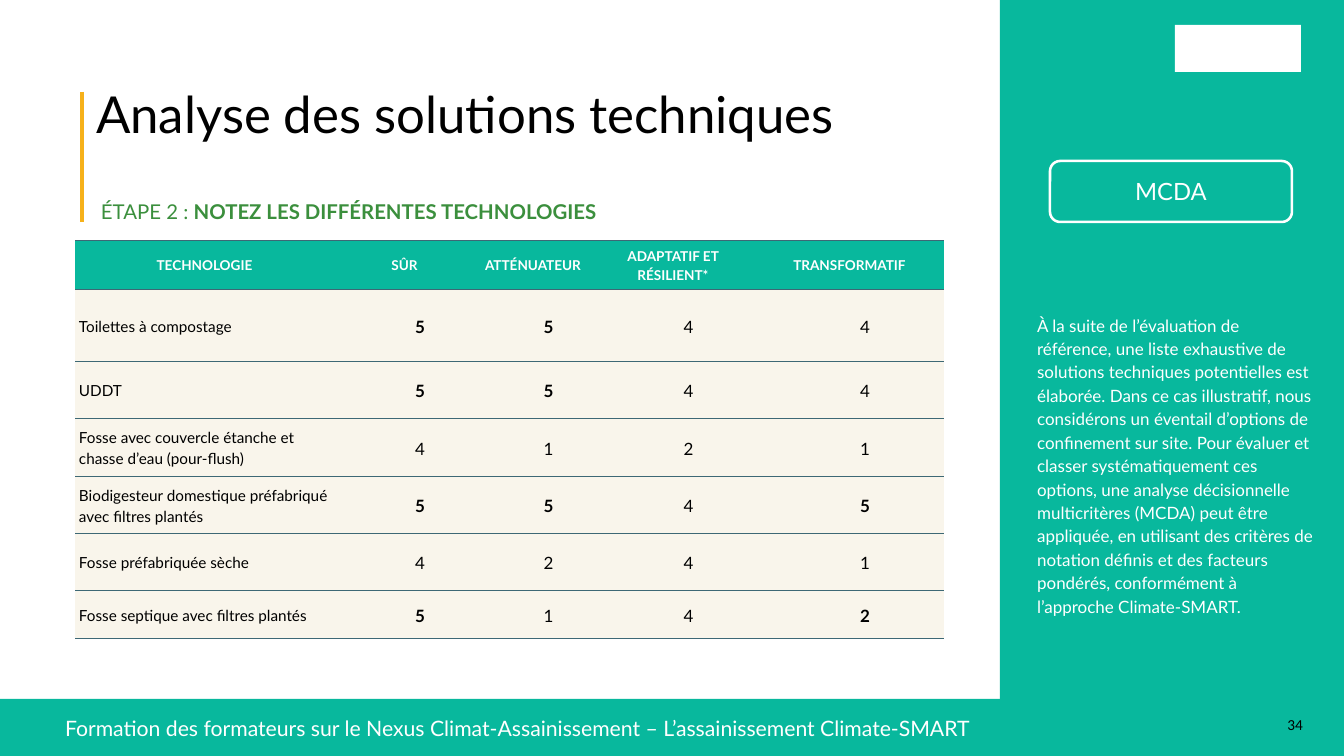
from lxml.etree import SubElement
from pptx import Presentation
from pptx.dml.color import RGBColor
from pptx.enum.shapes import MSO_CONNECTOR, MSO_SHAPE
from pptx.enum.text import MSO_ANCHOR, MSO_AUTO_SIZE, PP_ALIGN
from pptx.oxml.ns import qn
from pptx.util import Emu, Pt

# Content
TITLE = "Analyse des solutions techniques"
STEP = [("ÉTAPE 2 : ", False), ("NOTEZ LES DIFFÉRENTES TECHNOLOGIES", True)]
METHOD = "MCDA"
EXPLANATION = (
    "À la suite de l’évaluation de référence, une liste exhaustive de solutions "
    "techniques potentielles est élaborée. Dans ce cas illustratif, nous considérons "
    "un éventail d’options de confinement sur site. Pour évaluer et classer "
    "systématiquement ces options, une analyse décisionnelle multicritères (MCDA) peut "
    "être appliquée, en utilisant des critères de notation définis et des facteurs "
    "pondérés, conformément à l’approche Climate-SMART."
)
FOOTER = "Formation des formateurs sur le Nexus Climat-Assainissement – L’assainissement Climate-SMART"
PAGE_NUMBER = "34"

HEADINGS = ["TECHNOLOGIE", "SÛR", "ATTÉNUATEUR", "ADAPTATIF ET RÉSILIENT*", "TRANSFORMATIF"]
# Technology, its scores, and the score columns set in bold
RATINGS = [
    ("Toilettes à compostage", "5544", {0, 1}),
    ("UDDT", "5544", {0, 1}),
    ("Fosse avec couvercle étanche et chasse d’eau (pour-flush)", "4121", set()),
    ("Biodigesteur domestique préfabriqué avec filtres plantés", "5545", {0, 1, 3}),
    ("Fosse préfabriquée sèche", "4241", set()),
    ("Fosse septique avec filtres plantés", "5142", {0, 3}),
]
COLUMN_WIDTHS = [259, 141, 116, 164, 189]
ROW_HEIGHTS = [49, 72, 57, 58, 57, 57, 48]

TEAL, CREAM, WHITE, BLACK = "08B89D", "F9F5EB", "FFFFFF", "000000"
GREEN, YELLOW, RULE = "3B8F3D", "F6B11A", "3D6875"
WIDTH, HEIGHT, PANEL_LEFT, FOOTER_TOP = 1344, 756, 1000, 699
EMU_PER_PX = 14966


def px(length):
    return Emu(length * EMU_PER_PX)


def color(value):
    return RGBColor.from_string(value)


def place(shape, left, top, width, height):
    shape.left, shape.top = px(left), px(top)
    shape.width, shape.height = px(width), px(height)


def style(para, size, ink, bold=False, align=PP_ALIGN.LEFT, font="Lato"):
    para.alignment = align
    for span in para.runs:
        span.font.name, span.font.size, span.font.bold = font, Pt(size), bold
        span.font.color.rgb = color(ink)


def space(para, before, after):
    para.line_spacing = 1.15
    para.space_before, para.space_after = Pt(before), Pt(after)


def add_block(kind, left, top, width, height, fill):
    block = page.shapes.add_shape(kind, px(left), px(top), px(width), px(height))
    block.shadow.inherit = False
    block.fill.solid()
    block.fill.fore_color.rgb = color(fill)
    block.line.fill.background()
    return block


def add_text(text, left, top, width, height):
    box = page.shapes.add_textbox(px(left), px(top), px(width), px(height))
    box.text_frame.word_wrap = True
    box.text_frame.text = text
    return box.text_frame.paragraphs[0]


def add_rule(cell, side):
    line = SubElement(cell._tc.get_or_add_tcPr(), qn(f"a:{side}"), w=str(Pt(1)))
    fill = SubElement(line, qn("a:solidFill"))
    SubElement(fill, qn("a:srgbClr"), val=RULE)


def fill_cell(cell, text, fill):
    cell.text = text
    cell.vertical_anchor = MSO_ANCHOR.MIDDLE
    cell.margin_left = cell.margin_right = px(4)
    cell.margin_top = cell.margin_bottom = 0
    add_rule(cell, "lnB")
    cell.fill.solid()
    cell.fill.fore_color.rgb = color(fill)
    return cell.text_frame.paragraphs[0]


deck = Presentation()
deck.slide_width, deck.slide_height = px(WIDTH), px(HEIGHT)
page = deck.slides.add_slide(deck.slide_layouts[1])
title, body = page.placeholders

# Side panel and footer band, behind the placeholders
for area in [(PANEL_LEFT, 0, WIDTH - PANEL_LEFT, HEIGHT),
             (0, FOOTER_TOP, WIDTH, HEIGHT - FOOTER_TOP)]:
    title.element.addprevious(add_block(MSO_SHAPE.RECTANGLE, *area, TEAL).element)

# Plain emblem
add_block(MSO_SHAPE.RECTANGLE, 1175, 25, 126, 47, WHITE)

# Title and accent line
place(title, 90, 80, 840, 68)
title.text_frame.text = TITLE
title.text_frame.vertical_anchor = MSO_ANCHOR.TOP
title.text_frame.auto_size = MSO_AUTO_SIZE.NONE
style(title.text_frame.paragraphs[0], 60, BLACK)

accent = page.shapes.add_connector(MSO_CONNECTOR.STRAIGHT, px(82), px(92), px(82), px(222))
accent.line.color.rgb = color(YELLOW)
accent.line.width = Pt(5)
SubElement(accent.element.spPr, qn("a:effectLst"))

# Step heading
step = add_text("", 95, 192, 598, 32)
for text, bold in STEP:
    step.add_run().text = text
style(step, 24, GREEN, align=PP_ALIGN.JUSTIFY)
for span, (text, bold) in zip(step.runs, STEP):
    span.font.bold = bold
space(step, 0, 6)

# Explanation in the side panel
place(body, 1031, 309, 293, 312)
body.text_frame.text = EXPLANATION
body.text_frame.auto_size = MSO_AUTO_SIZE.NONE
explanation = body.text_frame.paragraphs[0]
style(explanation, 20, WHITE)
space(explanation, 0, 6)
properties = explanation._p.get_or_add_pPr()
properties.set("marL", "0")
properties.set("indent", "0")
SubElement(properties, qn("a:buNone"))

# Method label
label = add_block(MSO_SHAPE.ROUNDED_RECTANGLE, 1050, 161, 242, 61, TEAL)
label.line.color.rgb = color(WHITE)
label.line.width = Pt(3)
label.text_frame.text = METHOD
style(label.text_frame.paragraphs[0], 28, WHITE, align=PP_ALIGN.CENTER)

# Ratings table
frame = page.shapes.add_table(len(ROW_HEIGHTS), len(COLUMN_WIDTHS), px(75), px(240),
                              px(sum(COLUMN_WIDTHS)), px(sum(ROW_HEIGHTS)))
table = frame.table
table.first_row = table.horz_banding = False
table._tbl.tblPr.find(qn("a:tableStyleId")).text = "{2D5ABB26-0587-4C30-8999-92F81FD0307C}"
for column, width in zip(table.columns, COLUMN_WIDTHS):
    column.width = px(width)
for row, height in zip(table.rows, ROW_HEIGHTS):
    row.height = px(height)

for index, heading in enumerate(HEADINGS):
    cell = table.cell(0, index)
    add_rule(cell, "lnT")
    para = fill_cell(cell, heading, TEAL)
    style(para, 16, WHITE, True, PP_ALIGN.CENTER)
    space(para, 3, 3)

for row, (technology, scores, strong) in enumerate(RATINGS, 1):
    para = fill_cell(table.cell(row, 0), technology, CREAM)
    style(para, 18, BLACK)
    space(para, 0, 6)
    for index, score in enumerate(scores):
        para = fill_cell(table.cell(row, index + 1), score, CREAM)
        para.level = 1
        para._p.get_or_add_pPr().set("marL", str(px(31)))
        style(para, 20, BLACK, index in strong, PP_ALIGN.CENTER)
        space(para, 3, 3)

# Footer text and page number
style(add_text(FOOTER, 59, 712, 1158, 32), 25, WHITE)
style(add_text(PAGE_NUMBER, 1000, 712, 309, 18), 18, BLACK, align=PP_ALIGN.RIGHT, font="Calibri")

deck.save("out.pptx")
